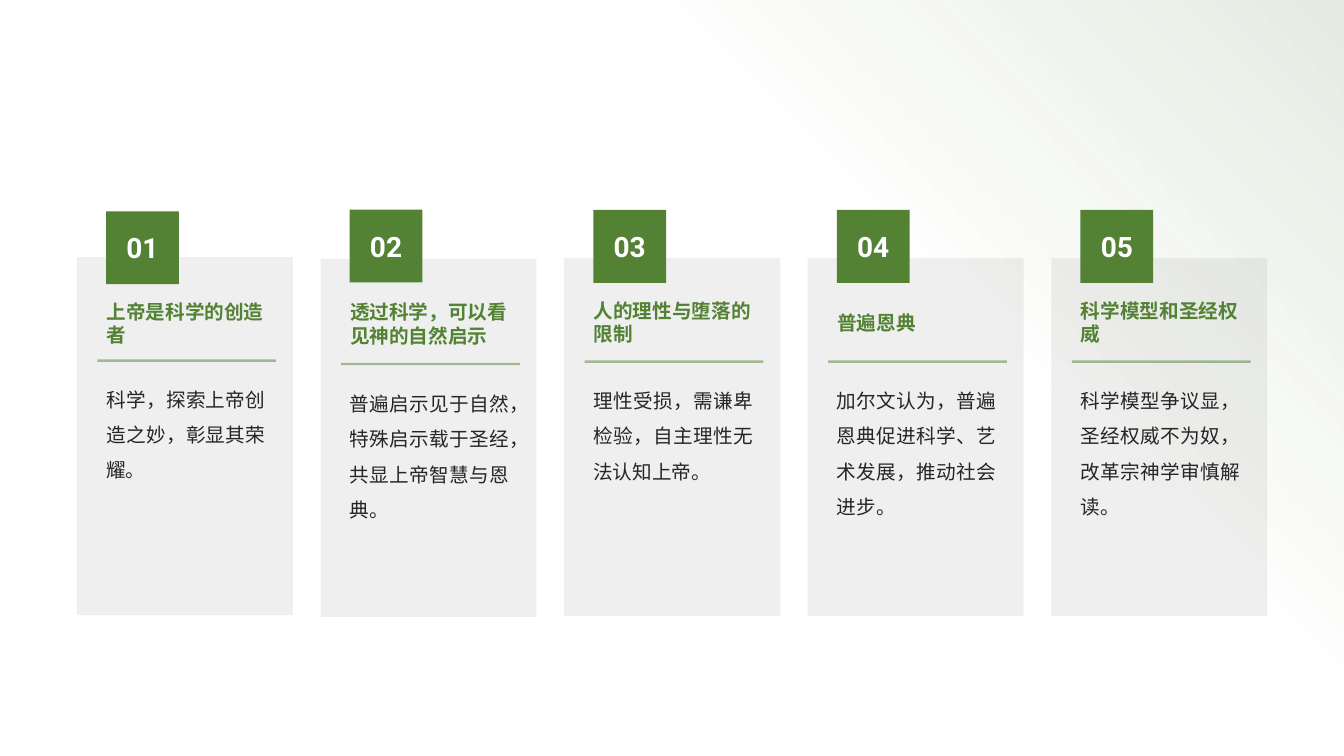
from lxml import etree
from pptx import Presentation
from pptx.dml.color import RGBColor
from pptx.enum import shapes, text
from pptx.oxml import parse_xml
from pptx.oxml.ns import nsdecls, qn
from pptx.util import Pt

GREEN = RGBColor(0x54, 0x82, 0x35)
GRAY = RGBColor(0x99, 0x99, 0x99)
DARK = RGBColor(0x26, 0x26, 0x26)
WHITE = RGBColor(0xFF, 0xFF, 0xFF)
ROUND = shapes.MSO_SHAPE.ROUNDED_RECTANGLE
ALIGN = text.PP_ALIGN
MIDDLE = text.MSO_ANCHOR.MIDDLE


def fade(node, share):
    clr = node.find(".//" + qn("a:srgbClr"))
    etree.SubElement(clr, qn("a:alpha")).set("val", str(share * 1000))


def write(shape, words, size, color, bold=False, wrap=True):
    frame = shape.text_frame
    frame.margin_left = frame.margin_right = Pt(0)
    frame.margin_top = frame.margin_bottom = Pt(0)
    frame.word_wrap = wrap
    run = frame.paragraphs[0].add_run()
    run.text = words
    font = run.font
    font.size, font.bold, font.name = Pt(size), bold, "Roboto"
    font.color.rgb = color
    etree.SubElement(run._r.get_or_add_rPr(), qn("a:ea")).set("typeface", "Roboto")
    return frame


deck = Presentation()
deck.slide_width, deck.slide_height = Pt(960), Pt(540)
slide = deck.slides.add_slide(deck.slide_layouts[6])
items = slide.shapes

glow = items.add_shape(shapes.MSO_SHAPE.RECTANGLE, Pt(447), Pt(0), Pt(513), Pt(540))
glow.shadow.inherit = False
glow.line.fill.background()
grad = parse_xml(
    f'<a:gradFill {nsdecls("a")} rotWithShape="1"><a:gsLst>'
    '<a:gs pos="0"><a:srgbClr val="3F6128"><a:alpha val="13000"/></a:srgbClr></a:gs>'
    '<a:gs pos="47000"><a:srgbClr val="548235"><a:alpha val="0"/></a:srgbClr></a:gs>'
    '</a:gsLst><a:path path="circle"><a:fillToRect l="100000" b="100000"/></a:path>'
    '</a:gradFill>')
glow._element.spPr.find(qn("a:prstGeom")).addnext(grad)

cards = [
    ("上帝是科学的创造者", "科学，探索上帝创造之妙，彰显其荣耀。",
     183.7, 151, 257.6, 268.6, 213.2),
    ("透过科学，可以看见神的自然启示", "普遍启示见于自然，特殊启示载于圣经，共显上帝智慧与恩典。",
     185, 149.7, 260, 271.6, 213.4),
    ("人的理性与堕落的限制", "理性受损，需谦卑检验，自主理性无法认知上帝。",
     184.4, 150, 258.4, 269.5, 212.6),
    ("普遍恩典", "加尔文认为，普遍恩典促进科学、艺术发展，推动社会进步。",
     184.4, 150, 258.4, 269.5, 213),
    ("科学模型和圣经权威", "科学模型争议显，圣经权威不为奴，改革宗神学审慎解读。",
     184.4, 150, 258.4, 269.5, 212.6),
]

for i, (title, body, top, badge_y, rule_y, body_y, title_y) in enumerate(cards):
    left = 55 + 174 * i
    inner = left + 20.8

    panel = items.add_shape(ROUND, Pt(left), Pt(top), Pt(154.2), Pt(255.6))
    badge_x = Pt(inner)
    note = items.add_textbox(Pt(inner), Pt(body_y), Pt(114), Pt(157))
    badge = items.add_shape(ROUND, badge_x, Pt(badge_y), Pt(52), Pt(52))
    for box, color in ((panel, GRAY), (badge, GREEN)):
        box.adjustments[0] = 0
        box.shadow.inherit = False
        box.fill.solid()
        box.fill.fore_color.rgb = color
        box.line.fill.background()
    fade(panel._element.spPr, 15)

    para = write(note, body, 14, DARK).paragraphs[0]
    para.alignment, para.line_spacing = ALIGN.JUSTIFY, 1.5

    frame = write(badge, f"{i + 1:02}", 20, WHITE, True, False)
    frame.vertical_anchor = MIDDLE
    frame.paragraphs[0].alignment = ALIGN.CENTER

    rule = items.add_connector(shapes.MSO_CONNECTOR.STRAIGHT, Pt(left + 14.6),
                               Pt(rule_y), Pt(left + 142.3), Pt(rule_y))
    rule.line.color.rgb = GREEN
    rule.line.width = Pt(1.75)
    props = rule._element.spPr
    fade(props, 50)
    etree.SubElement(props, qn("a:effectLst"))

    head = items.add_textbox(Pt(inner + 0.3), Pt(title_y), Pt(114), Pt(35.3))
    write(head, title, 14, GREEN, True).vertical_anchor = MIDDLE

deck.save("out.pptx")
